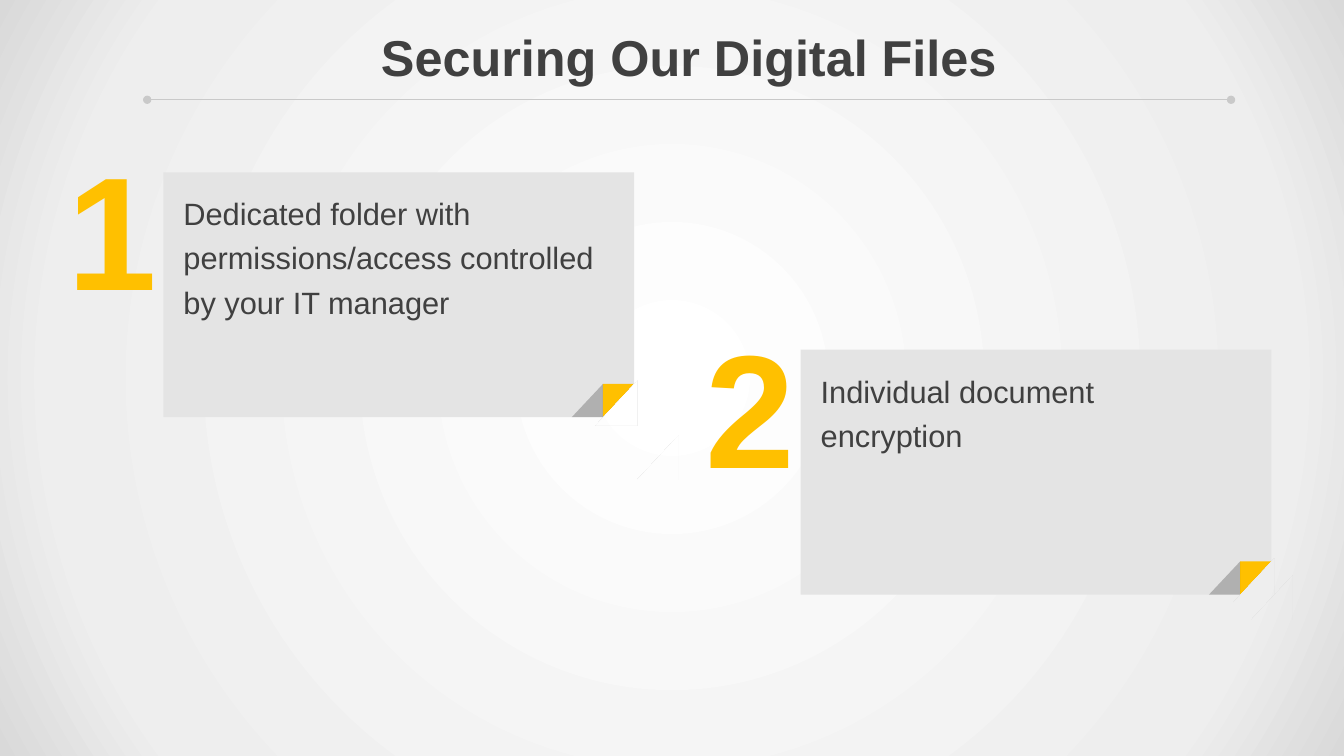
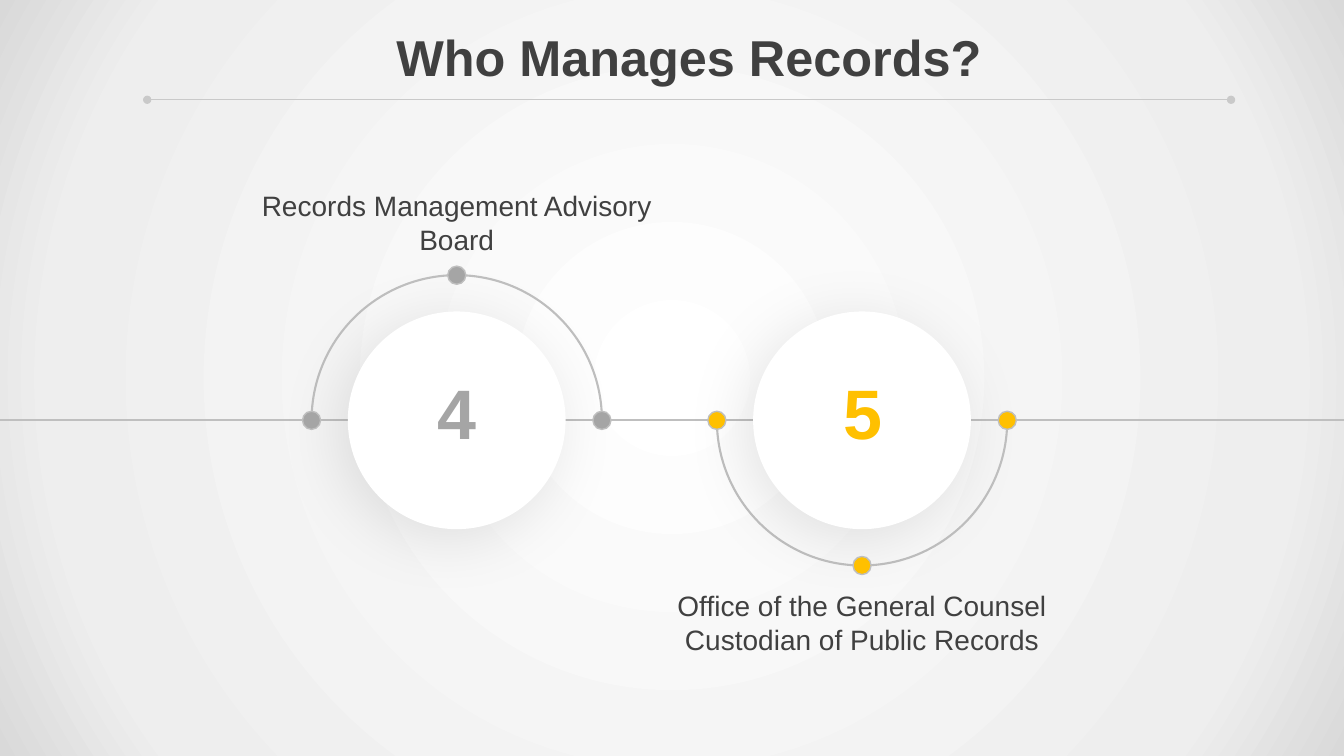
from lxml import etree
from pptx import Presentation
from pptx.dml.color import RGBColor
from pptx.enum import shapes, text
from pptx.oxml import parse_xml
from pptx.oxml.ns import nsdecls, qn
from pptx.util import Inches, Pt

FONT = "Arial"
DARK = RGBColor(0x40, 0x40, 0x40)
YELLOW = RGBColor(0xFF, 0xC0, 0x00)
GRAY = RGBColor(0xA5, 0xA5, 0xA5)
CARD = RGBColor(0xE4, 0xE4, 0xE4)
CREASE = RGBColor(0x26, 0x26, 0x26)
RULE = RGBColor(0xC9, 0xC9, 0xC9)
TRACK = RGBColor(0xBF, 0xBF, 0xBF)
WHITE = RGBColor(0xFF, 0xFF, 0xFF)
GRADIENT = ((0, "FFFFFF"), (81, "EEEEEE"), (100, "D9D9D9"))

LEFT, CENTER, RIGHT = (text.PP_ALIGN.LEFT, text.PP_ALIGN.CENTER,
                       text.PP_ALIGN.RIGHT)
SHAPE = shapes.MSO_SHAPE
SLIDE_W, SLIDE_H = 13.33, 7.5


def set_background(master):
    """Give the master the round gradient that every slide inherits."""
    stops = "".join(f'<a:gs pos="{pos * 1000}"><a:srgbClr val="{c}"/></a:gs>'
                    for pos, c in GRADIENT)
    bg = parse_xml(
        f'<p:bg {nsdecls("p", "a")}><p:bgPr><a:gradFill rotWithShape="1">'
        f'<a:gsLst>{stops}</a:gsLst><a:path path="circle">'
        '<a:fillToRect l="50000" t="50000" r="50000" b="50000"/></a:path>'
        '</a:gradFill><a:effectLst/></p:bgPr></p:bg>')
    c_sld = master.element.find(qn("p:cSld"))
    old = c_sld.find(qn("p:bg"))
    if old is not None:
        c_sld.remove(old)
    c_sld.insert(0, bg)


def style_text(tf, size, color, align, bold=False, spacing=None):
    for p in tf.paragraphs:
        p.alignment = align
        p.line_spacing = spacing
        for r in p.runs:
            r.font.name, r.font.size, r.font.bold = FONT, Pt(size), bold
            r.font.color.rgb = color


def set_insets(tf, left, top, right, bottom):
    tf.margin_left, tf.margin_top = Inches(left), Inches(top)
    tf.margin_right, tf.margin_bottom = Inches(right), Inches(bottom)


def add_number(s, number, x, y, w, h, size, color, align):
    tf = s.shapes.add_textbox(*map(Inches, (x, y, w, h))).text_frame
    tf.word_wrap = False
    tf.text = number
    style_text(tf, size, color, align, bold=True)


def add_preset(parent, kind, x, y, w, h, fill=None, line=None, weight=1):
    sp = parent.shapes.add_shape(kind, *map(Inches, (x, y, w, h)))
    sp.shadow.inherit = False
    if fill is None:
        sp.fill.background()
    else:
        sp.fill.solid()
        sp.fill.fore_color.rgb = fill
    if line is None:
        sp.line.fill.background()
    else:
        sp.line.color.rgb, sp.line.width = line, Pt(weight)
    return sp


def add_circle(s, cx, cy, radius, fill, line=None):
    return add_preset(s, SHAPE.OVAL, cx - radius, cy - radius,
                      2 * radius, 2 * radius, fill, line)


def add_line(s, x1, x2, y, color, weight, ends=False):
    cn = s.shapes.add_connector(shapes.MSO_CONNECTOR.STRAIGHT,
                                *map(Inches, (x1, y, x2, y)))
    cn.line.color.rgb, cn.line.width = color, Pt(weight)
    if ends:
        ln = cn.line._get_or_add_ln()
        for tag in ("a:headEnd", "a:tailEnd"):
            etree.SubElement(ln, qn(tag), type="oval")
    etree.SubElement(cn._element.spPr, qn("a:effectLst"))


def add_triangle(parent, points, fill=None, alpha=None):
    """Draw a triangle; without a fill it shows the slide background."""
    (x, y), *rest = [(Inches(px), Inches(py)) for px, py in points]
    builder = parent.shapes.build_freeform(x, y)
    builder.add_line_segments(rest, close=True)
    sp = builder.convert_to_shape()
    sp.shadow.inherit = False
    sp.line.fill.background()
    if fill is None:
        sp._element.remove(sp._element.find(qn("p:style")))
        sp._element.set("useBgFill", "1")
        return
    sp.fill.solid()
    sp.fill.fore_color.rgb = fill
    if alpha is not None:
        clr = sp._element.spPr.find(qn("a:solidFill"))[0]
        etree.SubElement(clr, qn("a:alpha"), val=str(alpha * 1000))


def add_title_slide(prs, title):
    """Start a slide with the shared title and rule."""
    s = prs.slides.add_slide(prs.slide_layouts[5])
    sp = s.shapes.title
    sp.left, sp.top, sp.width, sp.height = map(Inches,
                                               (1.46, 0.14, 10.75, 0.78))
    tf = sp.text_frame
    tf.text = title
    tf.vertical_anchor = text.MSO_ANCHOR.BOTTOM
    tf.auto_size = text.MSO_AUTO_SIZE.NONE
    style_text(tf, 36, DARK, CENTER, bold=True, spacing=0.9)
    add_line(s, 1.46, 12.21, 0.99, RULE, 1, ends=True)
    return s


def add_corner(s, x, y):
    """Cover a lower right corner with the slide background."""
    w, h = 0.41, 0.44
    add_triangle(s, ((x + w, y), (x, y + h), (x + w, y + h)))


def add_note_card(s, number, words, x, y):
    """Place a numbered card with a folded corner."""
    w, h, fold_w, fold_h = 4.67, 2.43, 0.31, 0.33
    add_number(s, number, x - 1.06, y - 0.47, 1.1, 2.04, 115, YELLOW, RIGHT)

    group = s.shapes.add_group_shape()
    sp = add_preset(group, SHAPE.RECTANGLE, x, y, w, h, CARD)
    tf = sp.text_frame
    tf.word_wrap = True
    tf.vertical_anchor = text.MSO_ANCHOR.TOP
    set_insets(tf, 0.2, 0.15, 0.3, 0.15)
    tf.text = words
    style_text(tf, 22, DARK, LEFT, spacing=1.2)

    # Folded corner
    right, bottom = x + w, y + h
    fold_x, fold_y = right - fold_w, bottom - fold_h
    add_triangle(group, ((fold_x, bottom), (right, fold_y), (fold_x, fold_y)),
                 YELLOW)
    add_triangle(group, ((fold_x - fold_w, bottom), (fold_x, fold_y),
                         (fold_x, bottom)), CREASE, alpha=27)
    add_corner(s, right - 0.38, bottom - 0.36)


def add_shadow(sp):
    effects = sp._element.spPr.find(qn("a:effectLst"))
    effects.append(parse_xml(
        f'<a:outerShdw {nsdecls("a")} blurRad="{Pt(45)}" dist="{Pt(9)}" '
        f'dir="{135 * 60000}" algn="ctr" rotWithShape="0">'
        '<a:srgbClr val="000000"><a:alpha val="10000"/></a:srgbClr>'
        '</a:outerShdw>'))


def add_milestone(s, number, lines, cx, cy, color, above):
    """Place a numbered disc with a half ring and its label."""
    ring, disc, dot = 1.44, 1.08, 0.09
    arc = add_preset(s, SHAPE.ARC, cx - ring, cy - ring, 2 * ring, 2 * ring,
                     line=TRACK, weight=1.5)
    half_turn = 108  # 180 degrees in adjustment units
    arc.adjustments[0], arc.adjustments[1] = ((half_turn, 0) if above
                                              else (0, half_turn))
    add_shadow(add_circle(s, cx, cy, disc, WHITE))
    crest = cy - ring if above else cy + ring
    for x, y in ((cx - ring, cy), (cx + ring, cy), (cx, crest)):
        add_circle(s, x, y, dot, color, TRACK)
    add_number(s, number, cx - 0.29, cy - 0.55, 0.59, 0.94, 50, color, CENTER)

    # Label
    w, h = 4.6, 0.67
    top = crest - 0.86 if above else crest + 0.23
    tf = s.shapes.add_textbox(*map(Inches, (cx - w / 2, top, w, h))).text_frame
    tf.word_wrap = True
    set_insets(tf, 0, 0, 0, 0)
    tf.text = "\n".join(lines)
    style_text(tf, 20, DARK, CENTER)


def build_files_slide(prs):
    s = add_title_slide(prs, "Securing Our Digital Files")
    add_note_card(s, "1", "Dedicated folder with permissions/access "
                  "controlled by your IT manager", 1.62, 1.71)
    add_note_card(s, "2", "Individual document encryption", 7.94, 3.47)
    # Loose corner pieces
    for x, y in ((6.32, 4.32), (12.41, 5.71)):
        add_corner(s, x, y)


def build_managers_slide(prs):
    s = add_title_slide(prs, "Who Manages Records?")
    axis = 4.17
    add_line(s, 0, SLIDE_W, axis, TRACK, 1.5)
    add_milestone(s, "4", ["Records Management Advisory Board"],
                  4.53, axis, GRAY, above=True)
    add_milestone(s, "5", ["Office of the General Counsel",
                           "Custodian of Public Records"],
                  8.55, axis, YELLOW, above=False)


def main():
    prs = Presentation()
    prs.slide_width, prs.slide_height = Inches(SLIDE_W), Inches(SLIDE_H)
    set_background(prs.slide_master)
    build_files_slide(prs)
    build_managers_slide(prs)
    prs.save("out.pptx")


if __name__ == "__main__":
    main()
